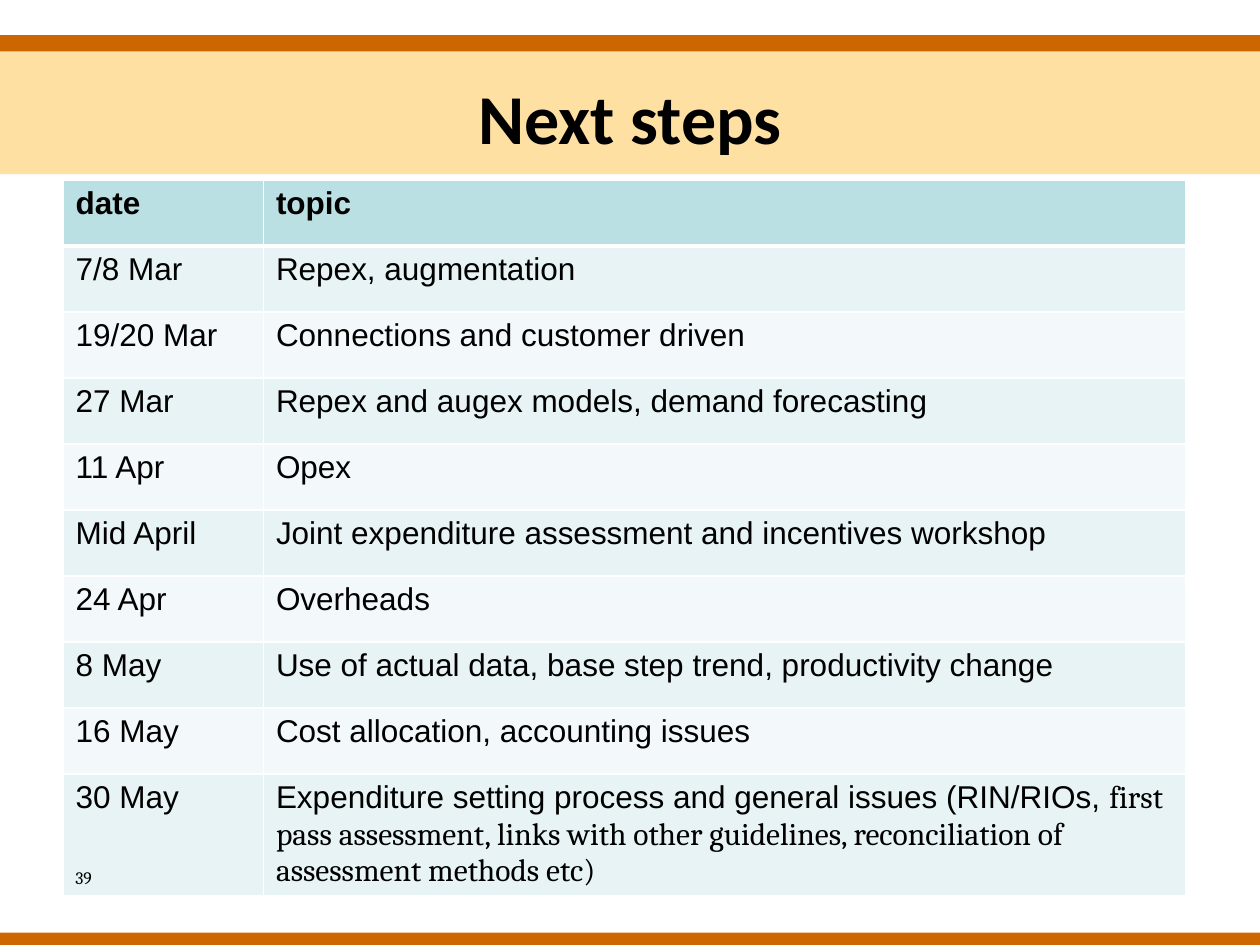
import pptx
import pptx.util
import pptx.dml.color
import pptx.enum.shapes
import pptx.enum.text
import pptx.oxml
import pptx.oxml.ns
import lxml.etree
from dataclasses import dataclass

Cm, Pt = pptx.util.Cm, pptx.util.Pt


@dataclass(frozen=True)
class Theme:
    rule: str = "CC6600"
    band: str = "FFCC66"
    header: str = "BBE0E3"
    odd_row: str = "E7F3F4"
    even_row: str = "F3F9FA"
    border: str = "FFFFFF"
    ink: str = "000000"
    title_font: str = "Calibri"
    body_font: str = "Arial"
    serif_font: str = "Cambria"
    title_size: int = 40
    body_size: int = 18
    number_size: int = 10


theme = Theme()


def add_span(para, text, font, size, bold=False):
    span = para.add_run()
    span.text = text
    span.font.name = font
    span.font.size = Pt(size)
    span.font.bold = bold
    span.font.color.rgb = pptx.dml.color.RGBColor.from_string(theme.ink)


def add_borders(cell, bottom_width):
    properties = cell._tc.get_or_add_tcPr()
    widths = {"L": 1, "R": 1, "T": 1, "B": bottom_width}
    for position, (side, width) in enumerate(widths.items()):
        line = pptx.oxml.parse_xml(
            f'<a:ln{side} {pptx.oxml.ns.nsdecls("a")} w="{Pt(width)}">'
            f'<a:solidFill><a:srgbClr val="{theme.border}"/></a:solidFill>'
            f'</a:ln{side}>')
        properties.insert(position, line)


deck = pptx.Presentation()
deck.slide_width, deck.slide_height = Cm(25.4), Cm(19.05)
page = deck.slides.add_slide(deck.slide_layouts[5])

# Bottom rule, title band and top rule: top, height, colour, opacity in percent
bars = [
    (18.8, 0.33, theme.rule, 100),
    (0.71, 2.8, theme.band, 60),
    (0.71, 0.33, theme.rule, 100),
]
for top, height, colour, opacity in bars:
    bar = page.shapes.add_shape(pptx.enum.shapes.MSO_SHAPE.RECTANGLE,
                                0, Cm(top), deck.slide_width, Cm(height))
    bar.shadow.inherit = False
    bar.line.fill.background()
    bar.fill.solid()
    bar.fill.fore_color.rgb = pptx.dml.color.RGBColor.from_string(colour)
    if opacity < 100:
        tint = bar.element.spPr.find(".//" + pptx.oxml.ns.qn("a:srgbClr"))
        lxml.etree.SubElement(tint, pptx.oxml.ns.qn("a:alpha"),
                              val=str(opacity * 1000))

# Title, brought in front of the band
title = page.shapes.title
title.left, title.top = Cm(1.27), Cm(0.76)
title.width, title.height = Cm(22.86), Cm(3.18)
title.text_frame.vertical_anchor = pptx.enum.text.MSO_ANCHOR.MIDDLE
para = title.text_frame.paragraphs[0]
para.alignment = pptx.enum.text.PP_ALIGN.CENTER
add_span(para, "Next steps", theme.title_font, theme.title_size, bold=True)
title.element.getparent().append(title.element)

# Schedule: date, topic, and any continuation in the serif font
schedule = [
    ("date", "topic"),
    ("7/8 Mar", "Repex, augmentation"),
    ("19/20 Mar", "Connections and customer driven"),
    ("27 Mar", "Repex and augex models, demand forecasting"),
    ("11 Apr", "Opex"),
    ("Mid April", "Joint expenditure assessment and incentives workshop"),
    ("24 Apr", "Overheads"),
    ("8 May", "Use of actual data, base step trend, productivity change"),
    ("16 May", "Cost allocation, accounting issues"),
    ("30 May", "Expenditure setting process and general issues (RIN/RIOs, ",
     "first pass assessment, links with other guidelines, "
     "reconciliation of assessment methods etc)"),
]
table = page.shapes.add_table(len(schedule), 2, Cm(1.27), Cm(3.63),
                              Cm(22.63), Cm(14.4)).table
table.columns[0].width, table.columns[1].width = Cm(4.04), Cm(18.59)
for index, (date, topic, *more) in enumerate(schedule):
    table.rows[index].height = Cm(2.43 if more else 1.33)
    is_header = index == 0
    if is_header:
        fill = theme.header
    else:
        fill = theme.odd_row if index % 2 else theme.even_row
    for column, text in enumerate((date, topic)):
        cell = table.cell(index, column)
        cell.fill.solid()
        cell.fill.fore_color.rgb = pptx.dml.color.RGBColor.from_string(fill)
        add_borders(cell, 3 if is_header else 1)
        add_span(cell.text_frame.paragraphs[0], text, theme.body_font,
                 theme.body_size, bold=is_header)
    for text in more:
        add_span(table.cell(index, 1).text_frame.paragraphs[0], text,
                 theme.serif_font, theme.body_size)

# Page number
box = page.shapes.add_textbox(Cm(1.27), Cm(17.35), Cm(7.62), Cm(1.32))
box.text_frame.word_wrap = True
add_span(box.text_frame.paragraphs[0], "39", theme.serif_font,
         theme.number_size)

deck.save("out.pptx")
